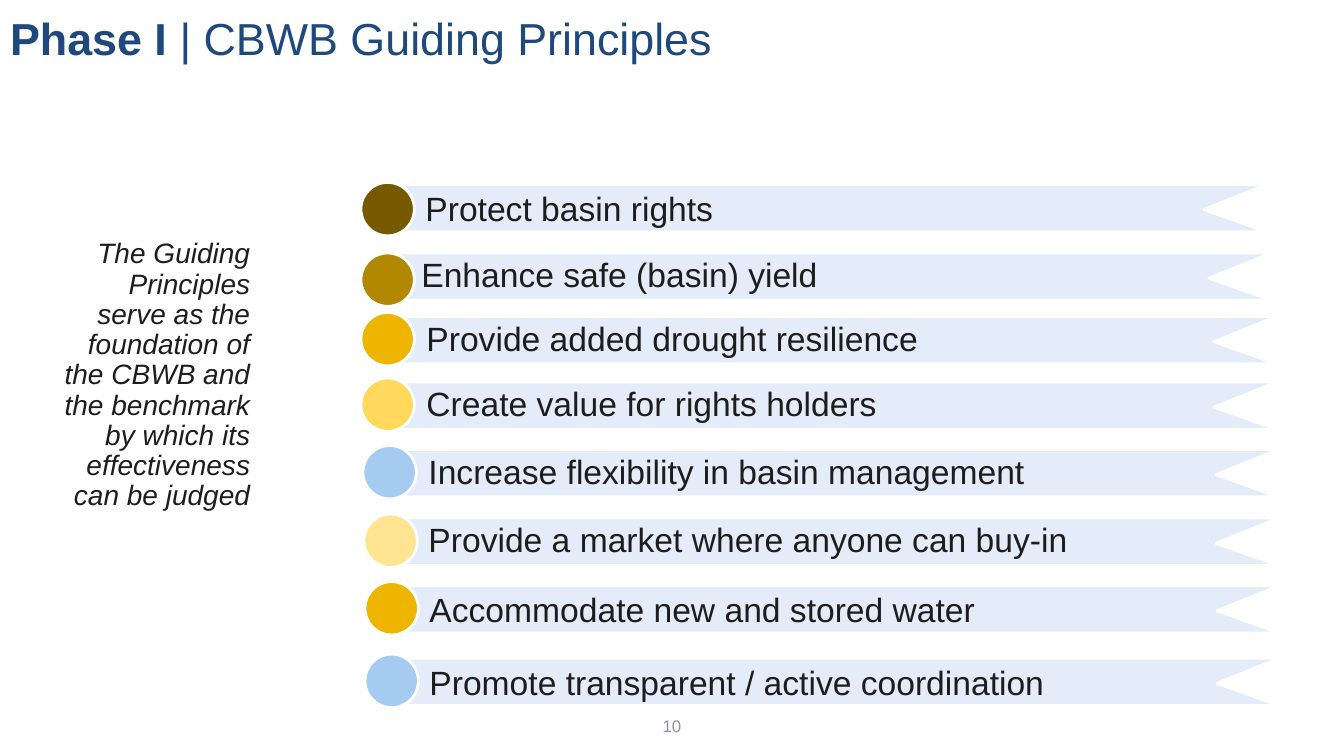
from dataclasses import dataclass

from lxml.etree import SubElement
from pptx import Presentation
from pptx.dml.color import RGBColor
from pptx.enum.shapes import MSO_SHAPE as Preset
from pptx.enum.text import MSO_ANCHOR as Anchor, MSO_AUTO_SIZE as AutoSize, PP_ALIGN as Align
from pptx.oxml.ns import qn
from pptx.shapes.autoshape import Shape
from pptx.slide import Slide
from pptx.text.text import Font
from pptx.util import Inches, Pt

NAVY = RGBColor(0x1F, 0x49, 0x7D)
INK = RGBColor(0x1D, 0x1D, 0x1D)
GRAY = RGBColor(0x8D, 0x95, 0xAA)
WHITE = RGBColor(0xFF, 0xFF, 0xFF)
PALE_BLUE = RGBColor(0xE3, 0xEC, 0xF8)
SKY = RGBColor(0xA6, 0xCB, 0xF1)
BROWN = RGBColor(0x77, 0x5A, 0x00)
OCHRE = RGBColor(0xB2, 0x88, 0x00)
GOLD = RGBColor(0xEE, 0xB5, 0x00)
YELLOW = RGBColor(0xFF, 0xD8, 0x5C)
CREAM = RGBColor(0xFF, 0xE5, 0x92)

RIBBON_WIDTH, RIBBON_HEIGHT = 8.76, 0.47
NOTCH_DEPTH, NOTCH_TOP = 0.62, 0.25
DOT_SIZE = 0.53


@dataclass(frozen=True)
class Principle:
    text: str
    color: RGBColor
    left: float
    top: float
    dot_left: float
    dot_top: float
    line_spacing: float = 0.9
    indent: float = 0.33


PRINCIPLES = [
    Principle("Protect basin rights", BROWN, 3.8, 1.83, 3.58, 1.81, 1.0, 0.42),
    Principle("Enhance safe (basin) yield", OCHRE, 3.85, 2.51, 3.58, 2.51),
    Principle("Provide added drought resilience", GOLD, 3.9, 3.14, 3.58, 3.1),
    Principle("Create value for rights holders", YELLOW, 3.9, 3.79, 3.58, 3.75),
    Principle("Increase flexibility in basin management", SKY, 3.92, 4.46, 3.6, 4.42),
    Principle("Provide a market where anyone can buy-in", CREAM, 3.92, 5.14, 3.61, 5.1),
    Principle("Accommodate new and stored water", GOLD, 3.93, 5.81, 3.62, 5.77, 1.0),
    Principle("Promote transparent / active coordination", SKY, 3.93, 6.53, 3.62, 6.49, 1.0),
]


def style_font(font: Font, size: float, color: RGBColor) -> None:
    font.name = "Arial"
    font.size = Pt(size)
    font.color.rgb = color


def paint(shape: Shape, color: RGBColor) -> None:
    shape.shadow.inherit = False
    shape.fill.solid()
    shape.fill.fore_color.rgb = color
    shape.line.color.rgb = WHITE
    shape.line.width = Pt(2)


def draw_title(slide: Slide) -> None:
    title = slide.shapes.title
    title.left, title.top = Inches(0), Inches(-0.25)
    title.width, title.height = Inches(12), Inches(1.25)
    frame = title.text_frame
    frame.auto_size = AutoSize.NONE
    frame.vertical_anchor = Anchor.MIDDLE
    heading = frame.paragraphs[0]
    heading.alignment = Align.LEFT
    for text, bold in (("Phase I", True), (" | CBWB Guiding Principles", False)):
        run = heading.add_run()
        run.text = text
        style_font(run.font, 32, NAVY)
        run.font.bold = bold


def draw_rationale(slide: Slide) -> None:
    rationale = slide.shapes.add_textbox(Inches(0.5), Inches(2.33), Inches(2.08), Inches(2.83))
    frame = rationale.text_frame
    frame.word_wrap = True
    frame.text = (
        "The Guiding Principles serve as the foundation of the CBWB "
        "and the benchmark by which its effectiveness can be judged"
    )
    paragraph = frame.paragraphs[0]
    paragraph.alignment = Align.RIGHT
    paragraph.line_spacing = 0.9
    style_font(paragraph.runs[0].font, 20, INK)
    paragraph.runs[0].font.italic = True


def draw_page_number(slide: Slide) -> None:
    page_number = slide.shapes.add_textbox(Inches(5.11), Inches(7), Inches(3.11), Inches(0.4))
    frame = page_number.text_frame
    frame.word_wrap = True
    frame.vertical_anchor = Anchor.MIDDLE
    frame.text = "10"
    frame.paragraphs[0].alignment = Align.CENTER
    style_font(frame.paragraphs[0].runs[0].font, 12, GRAY)


def draw_principle(slide: Slide, principle: Principle) -> None:
    group = slide.shapes.add_group_shape()
    left, top = principle.left, principle.top
    right, bottom = left + RIBBON_WIDTH, top + RIBBON_HEIGHT
    outline = group.shapes.build_freeform(Inches(left), Inches(bottom))
    corners = [(right, bottom), (right - NOTCH_DEPTH, top + NOTCH_TOP), (right, top), (left, top)]
    outline.add_line_segments([(Inches(x), Inches(y)) for x, y in corners], close=True)
    ribbon = outline.convert_to_shape()
    paint(ribbon, PALE_BLUE)

    frame = ribbon.text_frame
    frame.word_wrap = True
    frame.vertical_anchor = Anchor.MIDDLE
    frame.margin_left, frame.margin_right = Inches(principle.indent), Inches(0.16)
    frame.margin_top = frame.margin_bottom = Inches(0.08)
    frame.text = principle.text
    paragraph = frame.paragraphs[0]
    paragraph.alignment = Align.LEFT
    paragraph.line_spacing = principle.line_spacing
    style_font(paragraph.runs[0].font, 24, INK)

    dot = group.shapes.add_shape(
        Preset.OVAL, Inches(principle.dot_left), Inches(principle.dot_top),
        Inches(DOT_SIZE), Inches(DOT_SIZE),
    )
    paint(dot, principle.color)


def main() -> None:
    deck = Presentation()
    deck.slide_width, deck.slide_height = Inches(13.33), Inches(7.5)
    slide = deck.slides.add_slide(deck.slide_layouts[5])
    draw_title(slide)
    draw_page_number(slide)
    draw_rationale(slide)
    for principle in PRINCIPLES:
        draw_principle(slide, principle)
    deck.save("out.pptx")


if __name__ == "__main__":
    main()
